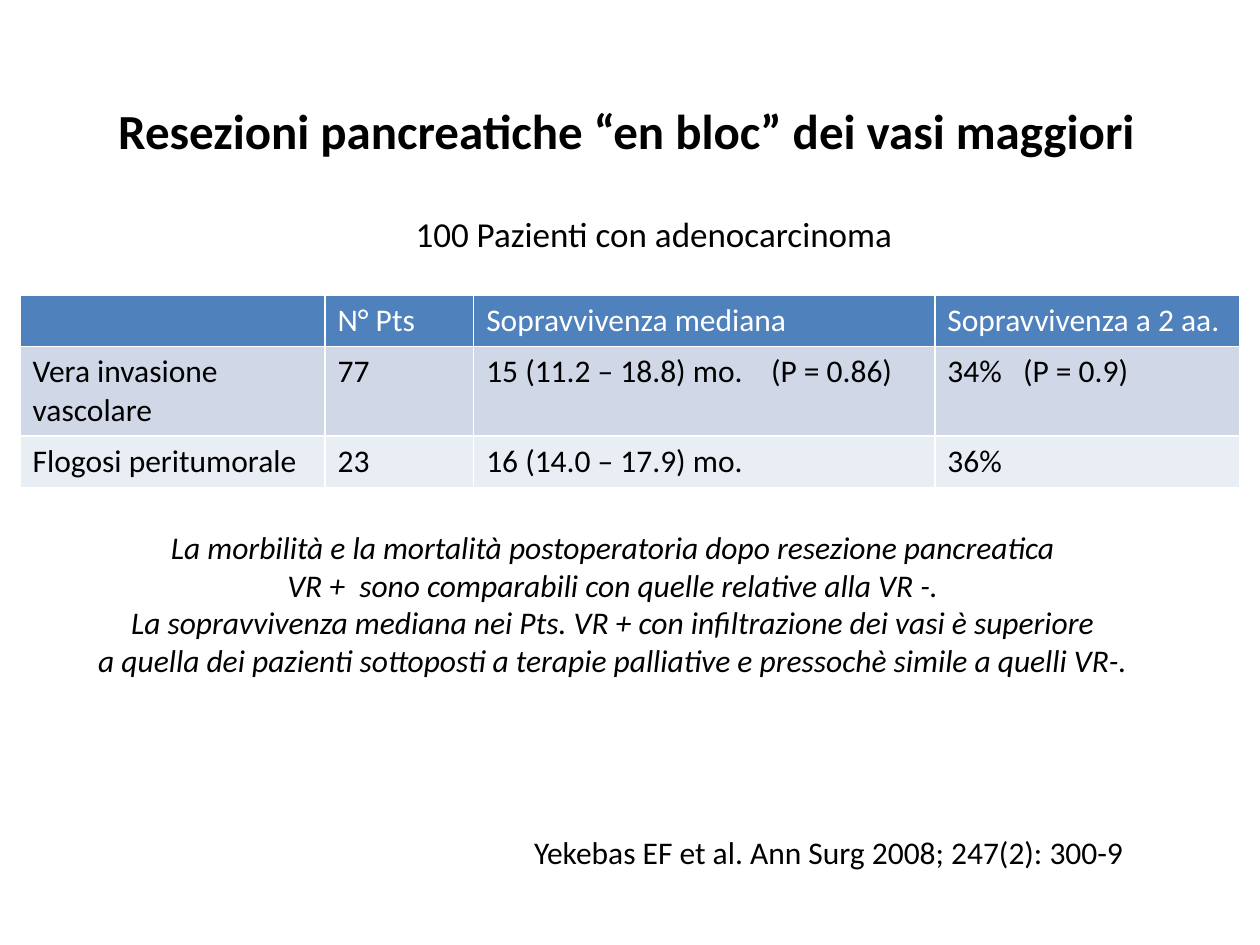
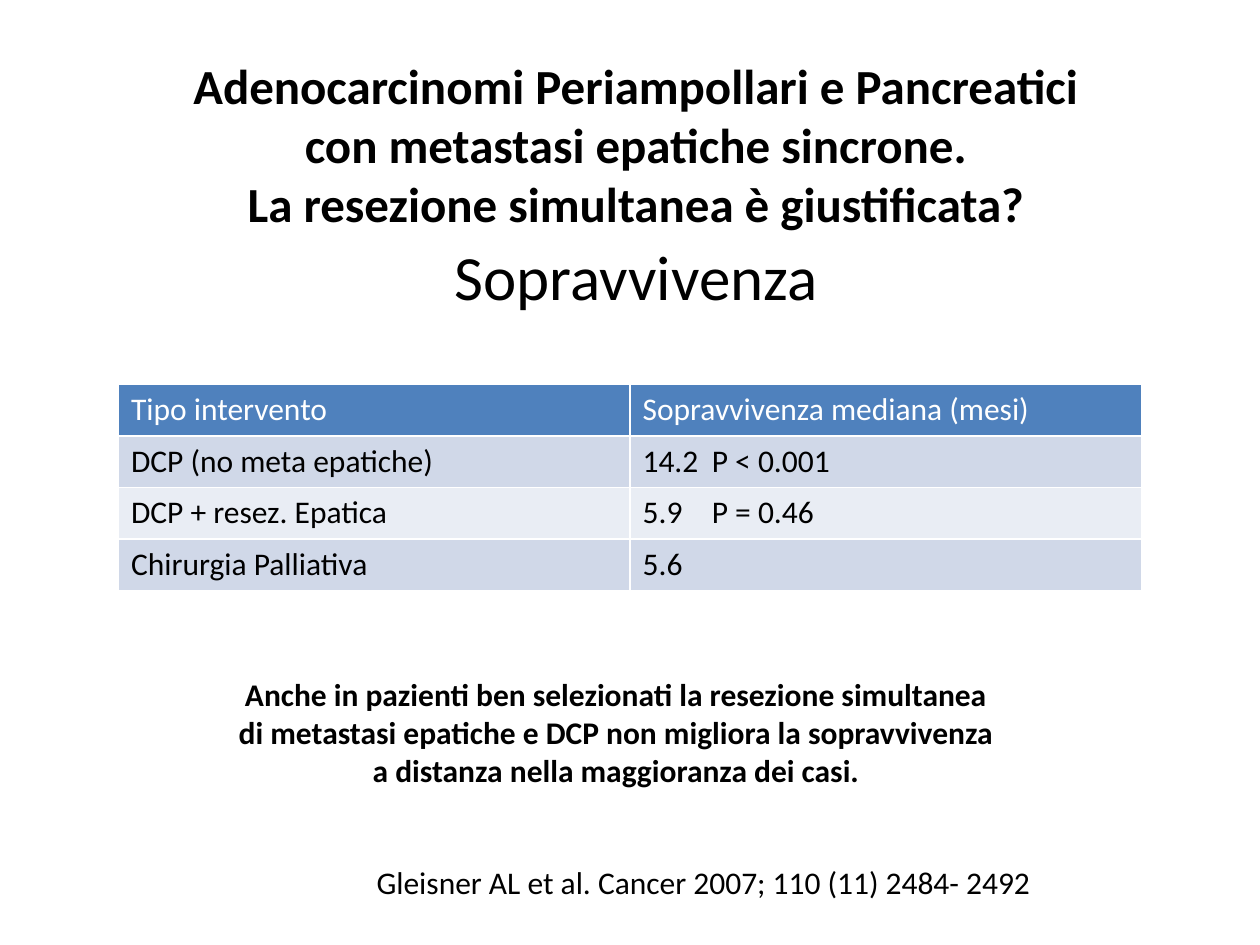
from lxml.etree import SubElement
from pptx import Presentation
from pptx.dml.color import RGBColor
from pptx.enum.text import MSO_ANCHOR, MSO_AUTO_SIZE, PP_ALIGN
from pptx.oxml.ns import qn
from pptx.util import Inches, Pt

# Shared look
FONT = "Calibri"
BLACK, WHITE = "000000", "FFFFFF"
HEADER_FILL = "4F81BD"
BAND_FILLS = ("D0D8E8", "E9EDF4")
ROW_HEIGHT, EXTRA_LINE = 0.41, 0.3
TITLE_SIZE = (9, 1.25)

# Text styles: size, bold, italic, alignment
STYLES = {
    "heading": dict(size=28, bold=True, align=PP_ALIGN.CENTER),
    "subject": dict(size=36, align=PP_ALIGN.CENTER),
    "group": dict(size=20),
    "cell": dict(size=18),
    "remark": dict(size=18, italic=True, align=PP_ALIGN.CENTER),
    "conclusion": dict(size=18, bold=True, align=PP_ALIGN.CENTER),
    "reference": dict(size=18),
}

# Content; boxes are (left, top, width, height), "\v" breaks a line
SLIDES = [
    {
        "title": dict(text="Resezioni pancreatiche “en bloc” dei vasi maggiori",
                      style="heading", corner=(0.47, 0.7), margin_bottom=0.64),
        "table": dict(
            corner=(0.16, 2.34),
            columns=(2.42, 1.18, 3.66, 2.42),
            two_line_rows={1},
            tabs={2: 2.26, 3: 0.6},
            rows=[
                ("", "N° Pts", "Sopravvivenza mediana", "Sopravvivenza a 2 aa."),
                ("Vera invasione vascolare", "77",
                 "15 (11.2 – 18.8) mo.\t(P = 0.86)", "34%\t(P = 0.9)"),
                ("Flogosi peritumorale", "23", "16 (14.0 – 17.9) mo.", "36%"),
            ],
        ),
        "texts": [
            dict(style="remark", box=(0.62, 4.14, 8.49, 1.31), wrap=True, lines=[
                "La morbilità e la mortalità postoperatoria dopo resezione pancreatica",
                "VR +  sono comparabili con quelle relative alla VR -.",
                "La sopravvivenza mediana nei Pts. VR + con infiltrazione dei vasi è superiore",
                "a quella dei pazienti sottoposti a terapie palliative e pressochè simile a quelli VR-.",
            ]),
            dict(style="reference", box=(4.14, 6.56, 4.94, 0.4), wrap=False,
                 lines=["Yekebas EF et al. Ann Surg 2008; 247(2): 300-9"]),
            dict(style="group", box=(3.2, 1.64, 4.09, 0.44), wrap=False,
                 lines=["100 Pazienti con adenocarcinoma"]),
        ],
    },
    {
        "title": dict(text="Sopravvivenza", style="subject",
                      corner=(0.55, 1.56), margin_bottom=0.05),
        "table": dict(
            corner=(0.94, 3.05),
            columns=(4.06, 4.06),
            two_line_rows=set(),
            tabs={1: 0.55},
            rows=[
                ("Tipo intervento", "Sopravvivenza mediana (mesi)"),
                ("DCP (no meta epatiche)", "14.2\tP < 0.001"),
                ("DCP + resez. Epatica", "5.9\tP = 0.46"),
                ("Chirurgia Palliativa", "5.6"),
            ],
        ),
        "texts": [
            dict(style="conclusion", box=(1.74, 5.31, 6.3, 1.01), wrap=False, lines=[
                "Anche in pazienti ben selezionati la resezione simultanea",
                "di metastasi epatiche e DCP non migliora la sopravvivenza",
                "a distanza nella maggioranza dei casi.",
            ]),
            dict(style="reference", box=(2.89, 6.8, 6.8, 0.4), wrap=True,
                 lines=["Gleisner AL et al. Cancer 2007; 110 (11) 2484- 2492"]),
            dict(style="heading", box=(1.02, 0.39, 8.05, 1.51), wrap=True, lines=[
                "Adenocarcinomi Periampollari e Pancreatici\v"
                "con metastasi epatiche sincrone.\v"
                "La resezione simultanea è giustificata?",
            ]),
        ],
    },
]


def color(value):
    return RGBColor.from_string(value)


def write(frame, text, style, text_color=BLACK):
    """Fill a text frame and format every run in the named style."""
    look = STYLES[style]
    font_values = {"name": FONT, "size": Pt(look["size"]),
                   "bold": look.get("bold", False),
                   "italic": look.get("italic", False)}
    frame.text = text
    for paragraph in frame.paragraphs:
        paragraph.alignment = look.get("align", PP_ALIGN.LEFT)
        for run in paragraph.runs:
            for name, value in font_values.items():
                setattr(run.font, name, value)
            run.font.color.rgb = color(text_color)


def add_tab_stop(paragraph, position):
    properties = paragraph._p.get_or_add_pPr()
    stops = SubElement(properties, qn("a:tabLst"))
    SubElement(stops, qn("a:tab"), pos=str(Inches(position)), algn="l")


def place_title(slide, text, style, corner, margin_bottom):
    title = slide.shapes.title
    for name, value in zip(("left", "top", "width", "height"), corner + TITLE_SIZE):
        setattr(title, name, Inches(value))
    frame = title.text_frame
    write(frame, text, style)
    frame.auto_size = MSO_AUTO_SIZE.NONE
    frame.vertical_anchor = MSO_ANCHOR.MIDDLE
    frame.margin_bottom = Inches(margin_bottom)


def add_survival_table(slide, corner, columns, two_line_rows, tabs, rows):
    heights = [ROW_HEIGHT + EXTRA_LINE * (index in two_line_rows)
               for index in range(len(rows))]
    box = (*corner, sum(columns), sum(heights))
    table = slide.shapes.add_table(len(rows), len(columns), *map(Inches, box)).table
    for column, width in zip(table.columns, columns):
        column.width = Inches(width)
    for row_index, (row, height) in enumerate(zip(rows, heights)):
        table.rows[row_index].height = Inches(height)
        is_header = row_index == 0
        fill = HEADER_FILL if is_header else BAND_FILLS[(row_index - 1) % 2]
        for column_index, text in enumerate(row):
            cell = table.cell(row_index, column_index)
            cell.fill.solid()
            cell.fill.fore_color.rgb = color(fill)
            write(cell.text_frame, text, "cell", WHITE if is_header else BLACK)
            if "\t" in text:
                add_tab_stop(cell.text_frame.paragraphs[0], tabs[column_index])


def add_text(slide, style, box, wrap, lines):
    frame = slide.shapes.add_textbox(*map(Inches, box)).text_frame
    frame.word_wrap = wrap
    frame.auto_size = MSO_AUTO_SIZE.SHAPE_TO_FIT_TEXT
    write(frame, "\n".join(lines), style)


def main():
    presentation = Presentation()
    presentation.slide_width, presentation.slide_height = Inches(10), Inches(7.5)
    title_only = presentation.slide_layouts.get_by_name("Title Only")
    for content in SLIDES:
        slide = presentation.slides.add_slide(title_only)
        place_title(slide, **content["title"])
        add_survival_table(slide, **content["table"])
        for text in content["texts"]:
            add_text(slide, **text)
    presentation.save("out.pptx")


if __name__ == "__main__":
    main()
